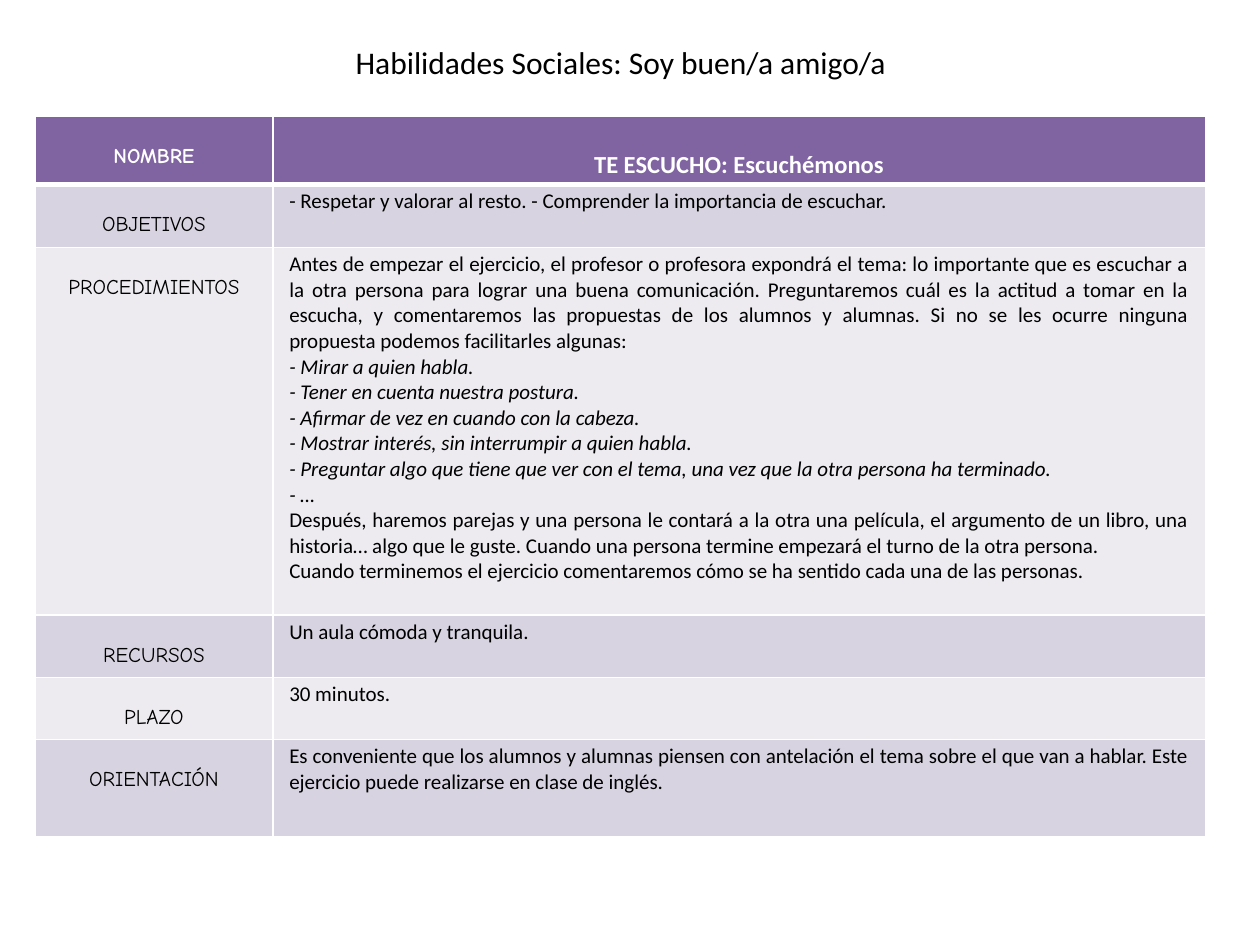
from lxml.etree import SubElement
from pptx import Presentation
from pptx.dml.color import RGBColor
from pptx.enum.text import MSO_ANCHOR, PP_ALIGN
from pptx.oxml.ns import qn
from pptx.util import Pt

# Content
TITLE = "Habilidades Sociales: Soy buen/a amigo/a"
HEADER = ("NOMBRE", "TE ESCUCHO: Escuchémonos")
STEPS_INTRO = (
    "Antes de empezar el ejercicio, el profesor o profesora expondrá el tema: "
    "lo importante que es escuchar a la otra persona para lograr una buena "
    "comunicación. Preguntaremos cuál es la actitud a tomar en la escucha, y "
    "comentaremos las propuestas de los alumnos y alumnas. Si no se les ocurre "
    "ninguna propuesta podemos facilitarles algunas:"
)
TIPS = [
    "- Mirar a quien habla.",
    "- Tener en cuenta nuestra postura.",
    "- Afirmar de vez en cuando con la cabeza.",
    "- Mostrar interés, sin interrumpir a quien habla.",
    "- Preguntar algo que tiene que ver con el tema, una vez que la otra "
    "persona ha terminado.",
    "- …",
]
STEPS_END = [
    "Después, haremos parejas y una persona le contará a la otra una película, "
    "el argumento de un libro, una historia… algo que le guste. Cuando una "
    "persona termine empezará el turno de la otra persona.",
    "Cuando terminemos el ejercicio comentaremos cómo se ha sentido cada una "
    "de las personas.",
]
# Label, paragraphs, row height
SECTIONS = [
    ("OBJETIVOS",
     ["- Respetar y valorar al resto. - Comprender la importancia de escuchar."],
     36),
    ("PROCEDIMIENTOS", [STEPS_INTRO, *TIPS, *STEPS_END], 210.2),
    ("RECURSOS", ["Un aula cómoda y tranquila."], 35.5),
    ("PLAZO", ["30 minutos."], 35.5),
    ("ORIENTACIÓN",
     ["Es conveniente que los alumnos y alumnas piensen con antelación el tema "
      "sobre el que van a hablar. Este ejercicio puede realizarse en clase de "
      "inglés."],
     55.4),
]

COLORS = {"header": "8064A2", "dark": "D8D3E0", "light": "EDEAF0",
          "white": "FFFFFF", "black": "000000"}
BODY_FONT, LABEL_FONT = "Calibri", "Comic Neue"
COLUMN_WIDTHS = (136, 532.8)
HEADER_HEIGHT = 39
SIDE_MARGIN, EDGE_MARGIN = 9.3, 2.5
LABEL_TOP, HEADING_TOP = 16.3, 19.5  # lowered first lines


def add_span(para, text, font, size, color, bold=False, italic=False):
    span = para.add_run()
    span.text = text
    span.font.name = font
    span.font.size = Pt(size)
    span.font.bold = bold
    span.font.italic = italic
    span.font.color.rgb = RGBColor.from_string(COLORS[color])


def add_borders(cell, top, bottom):
    properties = cell._tc.get_or_add_tcPr()
    for tag, width in (("lnL", 1), ("lnR", 1), ("lnT", top), ("lnB", bottom)):
        line = SubElement(properties, qn(f"a:{tag}"), w=str(Pt(width)))
        fill = SubElement(line, qn("a:solidFill"))
        SubElement(fill, qn("a:srgbClr"), val=COLORS["white"])


def fill_cell(cell, paragraphs, align, top_margin, fill, **style):
    cell.margin_left = cell.margin_right = Pt(SIDE_MARGIN)
    cell.margin_top, cell.margin_bottom = Pt(top_margin), Pt(EDGE_MARGIN)
    cell.vertical_anchor = MSO_ANCHOR.TOP
    cell.fill.solid()
    cell.fill.fore_color.rgb = RGBColor.from_string(COLORS[fill])
    for number, text in enumerate(paragraphs):
        frame = cell.text_frame
        para = frame.add_paragraph() if number else frame.paragraphs[0]
        para.alignment = align
        add_span(para, text, italic=text in TIPS, **style)


deck = Presentation()
deck.slide_width, deck.slide_height = Pt(720), Pt(540)
page = deck.slides.add_slide(deck.slide_layouts[5])

# Title
title = page.shapes.title
title.left, title.top, title.width, title.height = Pt(196), Pt(21), Pt(346), Pt(29)
title.text_frame.word_wrap = True
title.text_frame.vertical_anchor = MSO_ANCHOR.TOP
para = title.text_frame.paragraphs[0]
para.alignment = PP_ALIGN.LEFT
add_span(para, TITLE, BODY_FONT, 18, "black")

# Table grid
heights = [HEADER_HEIGHT] + [height for _, _, height in SECTIONS]
table = page.shapes.add_table(
    len(heights), len(COLUMN_WIDTHS), Pt(20), Pt(66.3),
    Pt(sum(COLUMN_WIDTHS)), Pt(sum(heights))).table
for column, width in zip(table.columns, COLUMN_WIDTHS):
    column.width = Pt(width)
for index, (row, height) in enumerate(zip(table.rows, heights)):
    row.height = Pt(height)
    for cell in row.cells:
        add_borders(cell, top=3 if index == 1 else 1, bottom=3 if index == 0 else 1)

# Header row
name_label, heading = HEADER
fill_cell(table.cell(0, 0), [name_label], PP_ALIGN.CENTER, LABEL_TOP, "header",
          font=LABEL_FONT, size=12, color="white", bold=True)
fill_cell(table.cell(0, 1), [heading], PP_ALIGN.CENTER, HEADING_TOP, "header",
          font=BODY_FONT, size=14, color="white", bold=True)

# Section rows, in alternating shades
for index, (label, paragraphs, _) in enumerate(SECTIONS, start=1):
    shade = "dark" if index % 2 else "light"
    fill_cell(table.cell(index, 0), [label], PP_ALIGN.CENTER, LABEL_TOP, shade,
              font=LABEL_FONT, size=12, color="black")
    fill_cell(table.cell(index, 1), paragraphs, PP_ALIGN.JUSTIFY, EDGE_MARGIN, shade,
              font=BODY_FONT, size=12, color="black")

deck.save("out.pptx")
